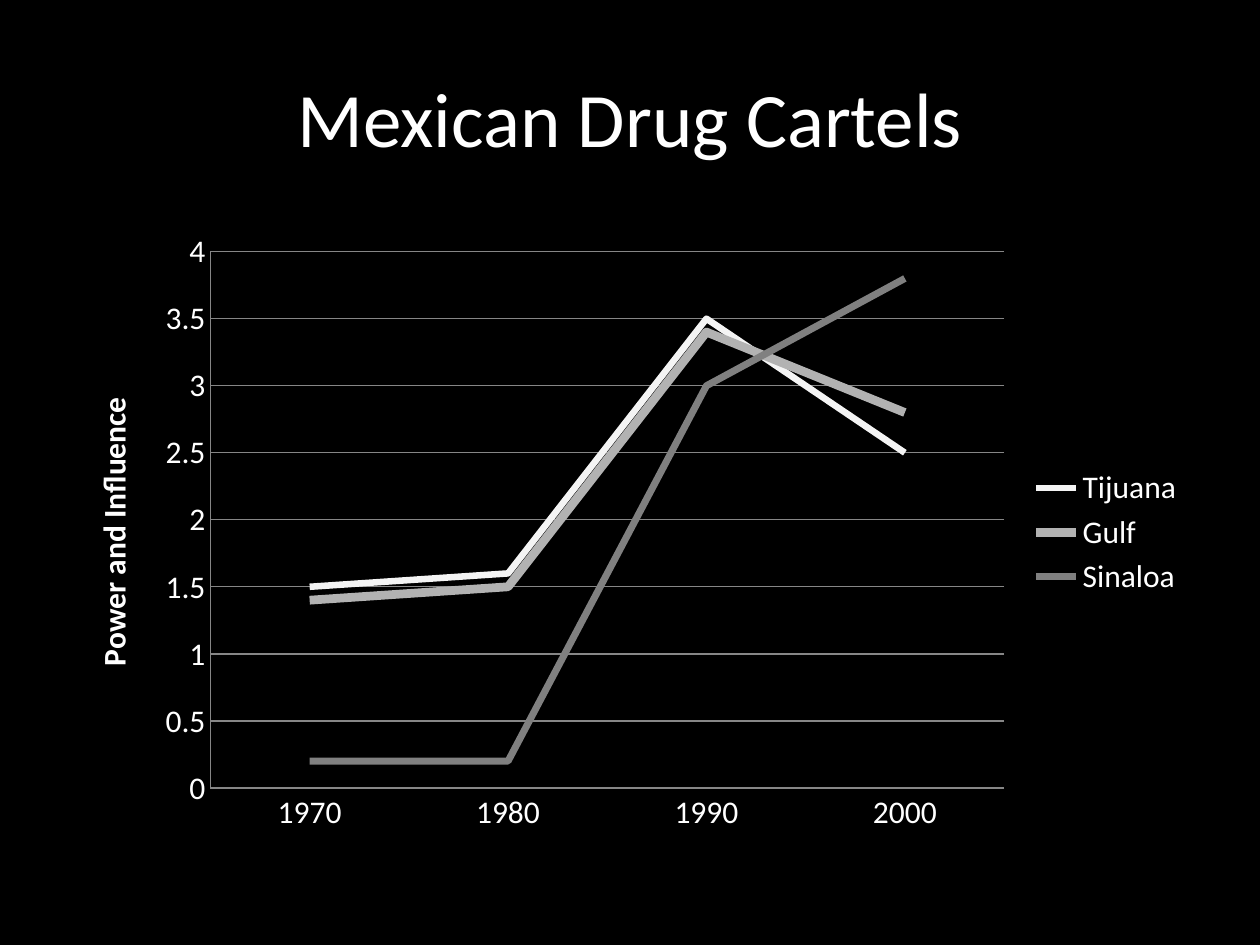
"""Builds a slide with a line chart of cartel influence by decade."""
from dataclasses import dataclass

from lxml import etree
from pptx import Presentation
from pptx.chart.chart import Chart
from pptx.chart.data import CategoryChartData
from pptx.dml.color import RGBColor
from pptx.enum.chart import XL_CHART_TYPE, XL_LEGEND_POSITION, XL_MARKER_STYLE, XL_TICK_MARK
from pptx.enum.text import MSO_ANCHOR, PP_ALIGN
from pptx.oxml.ns import qn
from pptx.slide import Slide
from pptx.text.text import Font
from pptx.util import Pt

LINE = XL_CHART_TYPE.LINE
RIGHT = XL_LEGEND_POSITION.RIGHT
PLAIN = XL_MARKER_STYLE.NONE
NO_TICK = XL_TICK_MARK.NONE
MIDDLE = MSO_ANCHOR.MIDDLE
CENTER = PP_ALIGN.CENTER


@dataclass(frozen=True)
class Theme:
    back: str = "000000"
    ink: str = "FFFFFF"
    grid: str = "868686"
    pale: str = "F4F4F4"
    mid: str = "B2B2B2"
    dark: str = "808080"
    face: str = "Calibri"
    head: float = 44
    body: float = 18
    rule: float = 0.75


@dataclass(frozen=True)
class Trend:
    name: str
    color: str
    width: float
    values: tuple[float, ...]


THEME = Theme()
YEARS = ("1970", "1980", "1990", "2000")
TRENDS = (
    Trend("Tijuana", THEME.pale, 3.75, (1.5, 1.6, 3.5, 2.5)),
    Trend("Gulf", THEME.mid, 5, (1.4, 1.5, 3.4, 2.8)),
    Trend("Sinaloa", THEME.dark, 4, (0.2, 0.2, 3, 3.8)),
)
FRAME = {"x": 0.13, "y": 0.05, "w": 0.7, "h": 0.86}


def style(font: Font, size: float, bold: bool = False) -> None:
    font.name, font.size, font.bold = THEME.face, Pt(size), bold
    font.color.rgb = RGBColor.from_string(THEME.ink)


def stroke(line, color: str, width: float) -> None:
    line.color.rgb = RGBColor.from_string(color)
    line.width = Pt(width)


def add_title(slide: Slide, text: str) -> None:
    frame = slide.shapes.add_textbox(Pt(36), Pt(21.6), Pt(648), Pt(90)).text_frame
    frame.word_wrap = True
    frame.vertical_anchor = MIDDLE
    para = frame.paragraphs[0]
    para.text, para.alignment = text, CENTER
    style(para.font, THEME.head)


def place_plot(chart: Chart) -> None:
    area = chart.element.find(".//" + qn("c:plotArea"))
    for old in area.findall(qn("c:layout")):
        area.remove(old)
    layout = etree.Element(qn("c:layout"))
    manual = etree.SubElement(layout, qn("c:manualLayout"))
    rules = {"layoutTarget": "inner", "xMode": "edge", "yMode": "edge", **FRAME}
    for tag, value in rules.items():
        etree.SubElement(manual, qn("c:" + tag)).set("val", str(value))
    area.insert(0, layout)


def add_trends(slide: Slide, label: str) -> None:
    data = CategoryChartData()
    data.categories = YEARS
    for trend in TRENDS:
        data.add_series(trend.name, trend.values)
    chart = slide.shapes.add_chart(LINE, Pt(36), Pt(126), Pt(648), Pt(356.4), data).chart
    chart.has_title = False
    style(chart.font, THEME.body)
    chart.has_legend = True
    chart.legend.position = RIGHT
    chart.legend.include_in_layout = False
    style(chart.legend.font, THEME.body)
    plot = chart.plots[0]
    plot.vary_by_categories = False
    for line, trend in zip(plot.series, TRENDS):
        line.smooth = False
        line.marker.style = PLAIN
        stroke(line.format.line, trend.color, trend.width)
    for axis in (chart.category_axis, chart.value_axis):
        axis.major_tick_mark = axis.minor_tick_mark = NO_TICK
        style(axis.tick_labels.font, THEME.body)
        stroke(axis.format.line, THEME.grid, THEME.rule)
    scale = chart.value_axis
    scale.minimum_scale, scale.maximum_scale, scale.major_unit = 0, 4, 0.5
    scale.has_major_gridlines = True
    stroke(scale.major_gridlines.format.line, THEME.grid, THEME.rule)
    para = scale.axis_title.text_frame.paragraphs[0]
    para.text = label
    style(para.font, THEME.body, True)
    place_plot(chart)


def main() -> None:
    deck = Presentation()
    deck.slide_width, deck.slide_height = Pt(720), Pt(540)
    slide = deck.slides.add_slide(deck.slide_layouts[6])
    fill = slide.background.fill
    fill.solid()
    fill.fore_color.rgb = RGBColor.from_string(THEME.back)
    add_title(slide, "Mexican Drug Cartels")
    add_trends(slide, "Power and Influence")
    deck.save("out.pptx")


if __name__ == "__main__":
    main()
